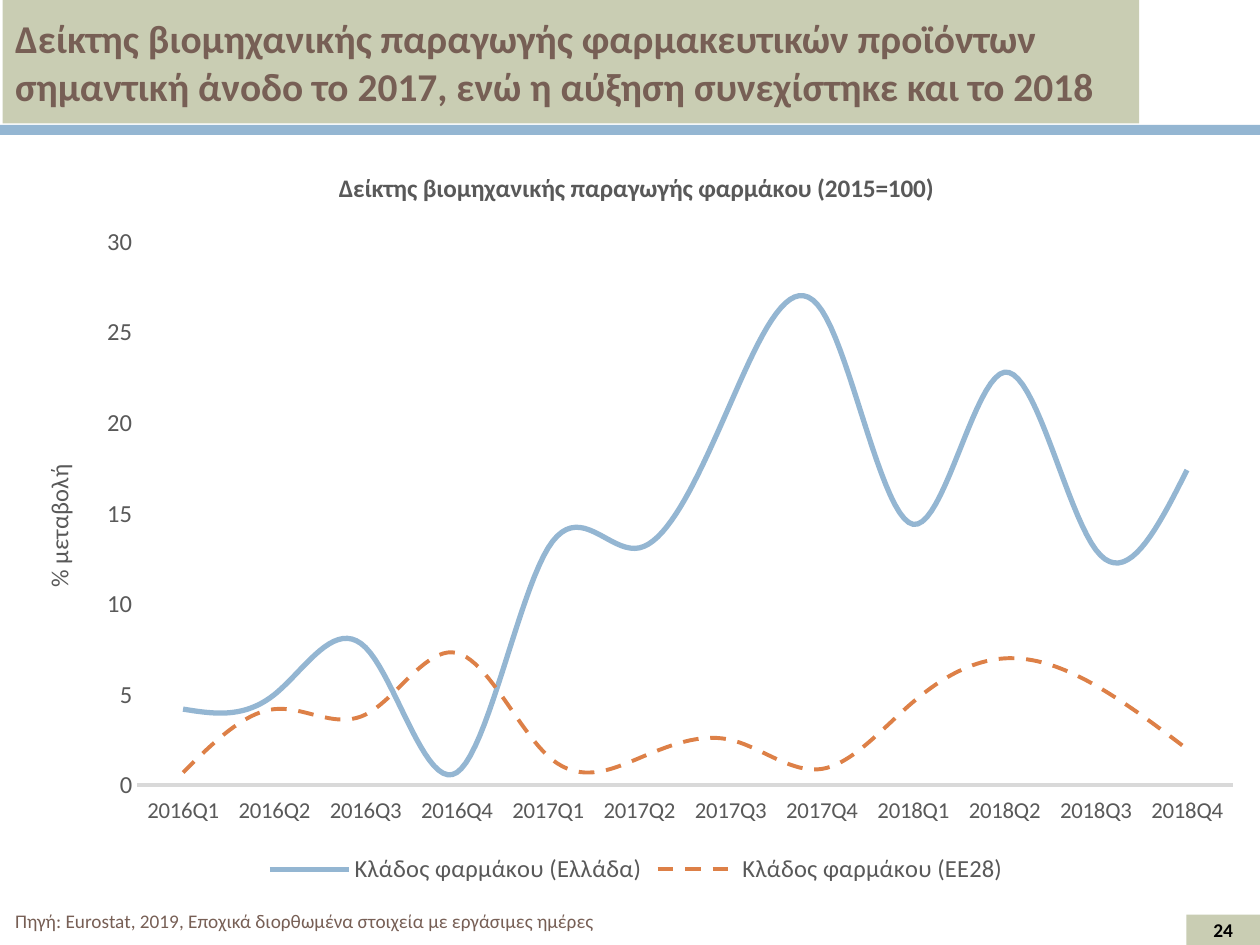
from pptx import Presentation
from pptx.chart.data import CategoryChartData
from pptx.dml.color import RGBColor
from pptx.enum.chart import XL_CHART_TYPE, XL_LEGEND_POSITION, XL_MARKER_STYLE, XL_TICK_LABEL_POSITION, XL_TICK_MARK
from pptx.enum.dml import MSO_LINE
from pptx.enum.shapes import MSO_SHAPE
from pptx.enum.text import MSO_ANCHOR, PP_ALIGN
from pptx.util import Pt

COLORS = {"sage": "C9CDB3", "blue": "94B6D2", "brown": "775F55", "orange": "DD8047",
          "grey": "595959", "axis": "D9D9D9", "black": "000000"}


def rgb(name):
    return RGBColor.from_string(COLORS[name])


def write(tf, text, size, color, bold=False, align=PP_ALIGN.LEFT):
    p = tf.paragraphs[0]
    p.alignment = align
    r = p.add_run()
    r.text = text
    r.font.name = "Calibri"
    r.font.size = Pt(size)
    r.font.bold = bold
    r.font.color.rgb = rgb(color)


prs = Presentation()
prs.slide_width, prs.slide_height = Pt(720), Pt(540)
s = prs.slides.add_slide(prs.slide_layouts[6])

bands = []
for x, y, w, h, color in [
    (678, 522.7, 42, 17.3, "sage"),
    (0, 71.3, 720, 5.8, "blue"),
    (1.5, 0, 649.5, 70.5, "sage"),
]:
    sp = s.shapes.add_shape(MSO_SHAPE.RECTANGLE, Pt(x), Pt(y), Pt(w), Pt(h))
    sp.shadow.inherit = False
    sp.fill.solid()
    sp.fill.fore_color.rgb = rgb(color)
    sp.line.fill.background()
    bands.append(sp)

page, rule, title = bands
for sp, text, size, color, align in [
    (title, "Δείκτης βιομηχανικής παραγωγής φαρμακευτικών προϊόντων σημαντική άνοδο το 2017, "
            "ενώ η αύξηση συνεχίστηκε και το 2018", 22.5, "brown", PP_ALIGN.LEFT),
    (page, "24", 11.1, "black", PP_ALIGN.CENTER),
]:
    tf = sp.text_frame
    tf.word_wrap = True
    tf.vertical_anchor = MSO_ANCHOR.MIDDLE
    tf.margin_top = tf.margin_bottom = 0
    write(tf, text, size, color, bold=True, align=align)

source = s.shapes.add_textbox(Pt(1.5), Pt(515), Pt(381), Pt(21.6))
tf = source.text_frame
tf.word_wrap = True
write(tf, "Πηγή: Eurostat, 2019, Εποχικά διορθωμένα στοιχεία με εργάσιμες ημέρες", 11, "brown",
      align=PP_ALIGN.JUSTIFY)
tf.paragraphs[0].line_spacing = 1.07
tf.paragraphs[0].space_after = Pt(8)

data = CategoryChartData(number_format="0.0")
data.categories = [f"{year}Q{q}" for year in (2016, 2017, 2018) for q in range(1, 5)]
data.add_series("Κλάδος φαρμάκου (Ελλάδα)",
                [4.2, 5, 7.6, 0.7, 13.1, 13.1, 21.1, 26.2, 14.4, 22.8, 13, 17.4])
data.add_series("Κλάδος φαρμάκου (ΕΕ28)",
                [0.7, 4.2, 3.9, 7.3, 1.6, 1.5, 2.5, 0.9, 4.6, 7, 5.5, 2])
chart = s.shapes.add_chart(XL_CHART_TYPE.LINE, Pt(8.6), Pt(82.8), Pt(710), Pt(425.5), data).chart
chart.font.name = "Calibri"
chart.font.size = Pt(14)
chart.font.color.rgb = rgb("grey")
chart.has_title = True
write(chart.chart_title.text_frame, "Δείκτης βιομηχανικής παραγωγής φαρμάκου (2015=100)", 14.4,
      "grey", bold=True, align=PP_ALIGN.CENTER)
chart.chart_title.include_in_layout = False
chart.has_legend = True
chart.legend.position = XL_LEGEND_POSITION.BOTTOM
chart.legend.include_in_layout = False

for axis, size in [(chart.category_axis, 13), (chart.value_axis, 14)]:
    axis.major_tick_mark = axis.minor_tick_mark = XL_TICK_MARK.NONE
    axis.has_major_gridlines = False
    axis.tick_labels.font.size = Pt(size)
    axis.tick_labels.font.name = "Calibri"
    axis.tick_labels.font.color.rgb = rgb("grey")

cat_axis, val_axis = chart.category_axis, chart.value_axis
cat_axis.tick_label_position = XL_TICK_LABEL_POSITION.LOW
cat_axis.format.line.color.rgb = rgb("axis")
cat_axis.format.line.width = Pt(2.5)
val_axis.format.line.fill.background()
val_axis.minimum_scale, val_axis.maximum_scale, val_axis.major_unit = 0, 30, 5
val_axis.tick_labels.number_format = "#,##0"
val_axis.tick_labels.number_format_is_linked = False
val_axis.has_title = True
write(val_axis.axis_title.text_frame, "% μεταβολή", 14, "grey", align=PP_ALIGN.CENTER)

chart.plots[0].vary_by_categories = False
for series, color, width, dash in zip(chart.plots[0].series, ("blue", "orange"), (3, 2.25),
                                      (MSO_LINE.SOLID, MSO_LINE.DASH)):
    series.smooth = True
    series.marker.style = XL_MARKER_STYLE.NONE
    series.format.line.color.rgb = rgb(color)
    series.format.line.width = Pt(width)
    series.format.line.dash_style = dash

prs.save("out.pptx")
